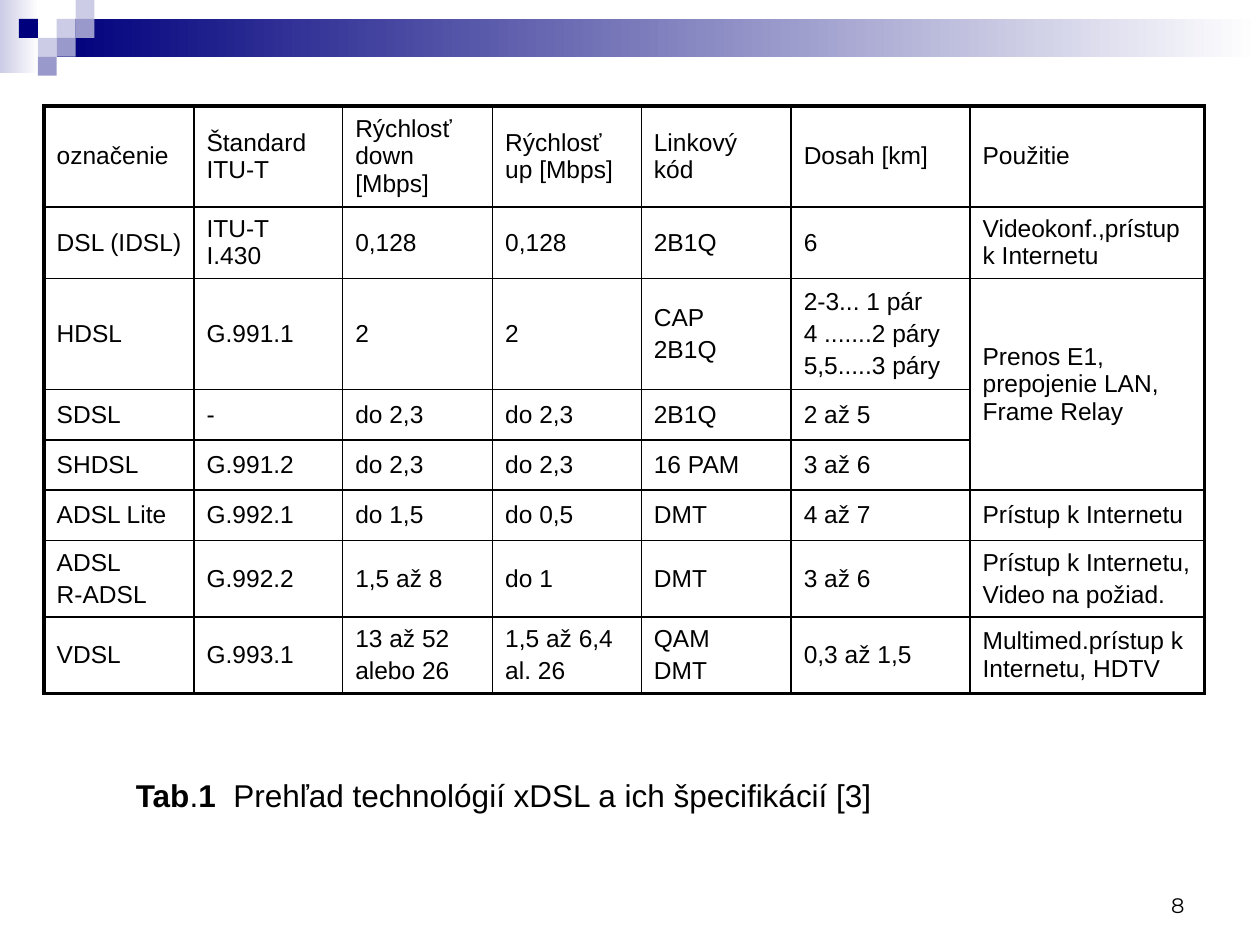
import pptx
import pptx.util
import pptx.dml.color
import pptx.enum.shapes
import pptx.enum.text
import pptx.oxml.ns
import lxml.etree

Inches = pptx.util.Inches
Pt = pptx.util.Pt
RGBColor = pptx.dml.color.RGBColor
ANCHOR = pptx.enum.text.MSO_ANCHOR

BLACK = RGBColor(0, 0, 0)
WHITE = RGBColor(0xFF, 0xFF, 0xFF)
NAVY = RGBColor(0, 0, 0x7D)
LILAC = RGBColor(0xCC, 0xCC, 0xE6)
VIOLET = RGBColor(0x99, 0x99, 0xCC)

UNIT = 0.15
SQUARES = [
    (3, 1, LILAC), (4, 0, LILAC), (4, 1, VIOLET), (2, 2, LILAC),
    (1, 1, NAVY), (3, 2, VIOLET), (2, 3, VIOLET),
]

COLS = [1.19, 1.18, 1.19, 1.18, 1.19, 1.42, 1.86]
ROWS = [0.8, 0.57, 0.88, 0.4, 0.4, 0.4, 0.6, 0.6]
CELLS = [
    ["označenie", "Štandard ITU-T", "Rýchlosť down [Mbps]", "Rýchlosť up [Mbps]",
     "Linkový kód", "Dosah [km]", "Použitie"],
    ["DSL (IDSL)", "ITU-T I.430", "0,128", "0,128", "2B1Q", "6",
     "Videokonf.,prístup k Internetu"],
    ["HDSL", "G.991.1", "2", "2", "CAP\n2B1Q",
     "2-3... 1 pár\n4 .......2 páry\n5,5.....3 páry",
     "Prenos E1, prepojenie LAN, Frame Relay"],
    ["SDSL", "-", "do 2,3", "do 2,3", "2B1Q", "2 až 5", ""],
    ["SHDSL", "G.991.2", "do 2,3", "do 2,3", "16 PAM", "3 až 6", ""],
    ["ADSL Lite", "G.992.1", "do 1,5", "do 0,5", "DMT", "4 až 7", "Prístup k Internetu"],
    ["ADSL\nR-ADSL", "G.992.2", "1,5 až 8", "do 1", "DMT", "3 až 6",
     "Prístup k Internetu,\nVideo na požiad."],
    ["VDSL", "G.993.1", "13 až 52\nalebo 26", "1,5 až 6,4\nal. 26", "QAM\nDMT",
     "0,3 až 1,5", "Multimed.prístup k Internetu, HDTV"],
]


def style_font(font, size, name="Arial", bold=False):
    font.size = Pt(size)
    font.name = name
    font.bold = bold
    font.color.rgb = BLACK


def add_rect(s, x, y, w, h, start, end=None):
    sp = s.shapes.add_shape(pptx.enum.shapes.MSO_SHAPE.RECTANGLE,
                            Inches(x), Inches(y), Inches(w), Inches(h))
    sp.shadow.inherit = False
    sp.line.fill.background()
    if end is None:
        sp.fill.solid()
        sp.fill.fore_color.rgb = start
    else:
        sp.fill.gradient()
        sp.fill.gradient_angle = 0
        for stop, color in zip(sp.fill.gradient_stops, (start, end)):
            stop.color.rgb = color


def add_banner(s, x, y, w):
    add_rect(s, x, y, 0.31, 0.58, LILAC, WHITE)
    add_rect(s, x + 3 * UNIT, y + UNIT, w - 3 * UNIT, 2 * UNIT, NAVY, WHITE)
    for col, row, color in SQUARES:
        add_rect(s, x + col * UNIT, y + row * UNIT, UNIT, UNIT, color)


def set_border(cell, side, width):
    ln = lxml.etree.SubElement(cell._tc.get_or_add_tcPr(),
                               pptx.oxml.ns.qn("a:ln" + side), w=str(Pt(width)))
    fill = lxml.etree.SubElement(ln, pptx.oxml.ns.qn("a:solidFill"))
    lxml.etree.SubElement(fill, pptx.oxml.ns.qn("a:srgbClr"), val=str(BLACK))


def add_dsl_table(s, x, y):
    last_row, last_col = len(ROWS) - 1, len(COLS) - 1
    table = s.shapes.add_table(len(ROWS), len(COLS), Inches(x), Inches(y),
                               Inches(sum(COLS)), Inches(sum(ROWS))).table
    table.first_row = table.horz_banding = False
    for col, width in zip(table.columns, COLS):
        col.width = Inches(width)
    for row, height in zip(table.rows, ROWS):
        row.height = Inches(height)
    table.cell(2, last_col).merge(table.cell(4, last_col))
    for r, texts in enumerate(CELLS):
        for c, text in enumerate(texts):
            cell = table.cell(r, c)
            outer = {"L": c == 0, "R": c == last_col, "T": r == 0, "B": r == last_row}
            for side, is_outer in outer.items():
                set_border(cell, side, 2.25 if is_outer else 1)
            cell.fill.background()
            cell.vertical_anchor = ANCHOR.MIDDLE
            cell.text_frame.text = text
            for p in cell.text_frame.paragraphs:
                p.space_before = Pt(2.8)
                style_font(p.font, 14)
                for run in p.runs:
                    style_font(run.font, 14)


def add_text_box(s, x, y, w, h):
    tf = s.shapes.add_textbox(Inches(x), Inches(y), Inches(w), Inches(h)).text_frame
    tf.word_wrap = True
    return tf


def add_caption(s, x, y, w, h):
    p = add_text_box(s, x, y, w, h).paragraphs[0]
    p.space_before = Pt(9)
    parts = [("Tab", True), (".", False), ("1 ", True),
             (" Prehľad technológií xDSL a ich špecifikácií [3]", False)]
    for text, bold in parts:
        r = p.add_run()
        r.text = text
        style_font(r.font, 18, bold=bold)


def add_page_number(s, x, y, w, h):
    tf = add_text_box(s, x, y, w, h)
    tf.vertical_anchor = ANCHOR.BOTTOM
    tf.text = "8"
    p = tf.paragraphs[0]
    p.alignment = pptx.enum.text.PP_ALIGN.RIGHT
    style_font(p.runs[0].font, 12, "Montserrat")


def main():
    prs = pptx.Presentation()
    prs.slide_width, prs.slide_height = Inches(10), Inches(7.5)
    s = prs.slides.add_slide(prs.slide_layouts[6])
    add_banner(s, 0, 0, 10)
    add_page_number(s, 7.17, 6.83, 2.33, 0.5)
    add_caption(s, 0.98, 6.11, 7.88, 0.4)
    add_dsl_table(s, 0.35, 0.84)
    prs.save("out.pptx")


if __name__ == "__main__":
    main()
